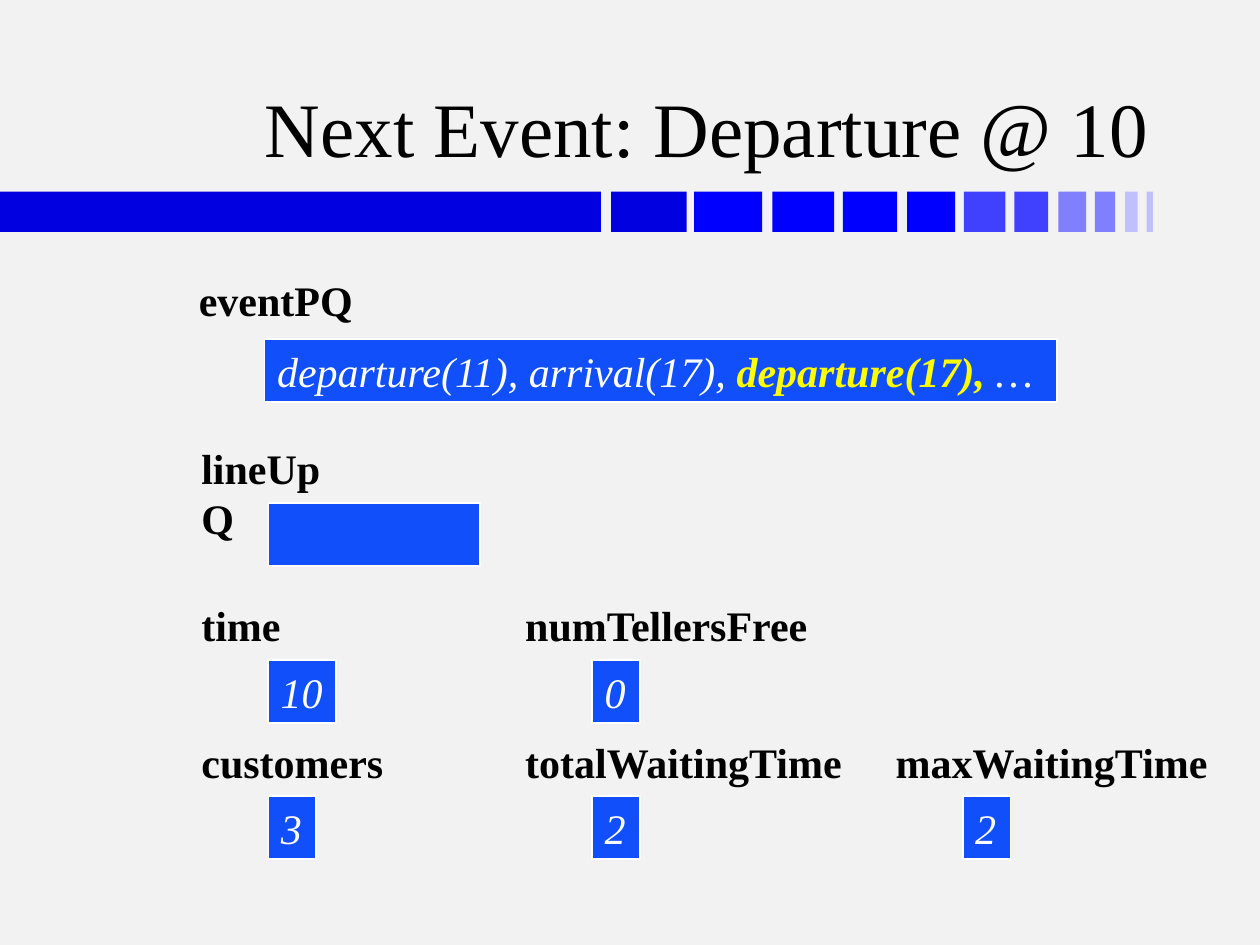
"""Build the bank simulation slide for the departure event at time 10."""
import pptx
import pptx.dml.color
import pptx.enum.shapes
import pptx.enum.text
import pptx.util

RGBColor = pptx.dml.color.RGBColor
ALIGN = pptx.enum.text.PP_ALIGN
ANCHOR = pptx.enum.text.MSO_ANCHOR
AUTO_SIZE = pptx.enum.text.MSO_AUTO_SIZE
RECTANGLE = pptx.enum.shapes.MSO_SHAPE.RECTANGLE

PX = 9144
FONT = "Times New Roman"
PAPER = RGBColor(0xF2, 0xF2, 0xF2)
BLACK = RGBColor(0, 0, 0)
WHITE = RGBColor(0xFF, 0xFF, 0xFF)
YELLOW = RGBColor(0xFF, 0xFF, 0)
BOX_BLUE = RGBColor(0x11, 0x4F, 0xFB)
NAVY = RGBColor(0, 0, 0xE0)
BLUE = RGBColor(0, 0, 0xFF)
MEDIUM_BLUE = RGBColor(0x40, 0x40, 0xFF)
LIGHT_BLUE = RGBColor(0x80, 0x80, 0xFF)
PALE_BLUE = RGBColor(0xC0, 0xC0, 0xFF)

BAR_SEGMENTS = [
    (0, 477, NAVY), (485, 60, NAVY),
    (551, 54, BLUE), (613, 49, BLUE), (669, 43, BLUE), (720, 38, BLUE),
    (765, 33, MEDIUM_BLUE), (805, 27, MEDIUM_BLUE),
    (840, 22, LIGHT_BLUE), (869, 16, LIGHT_BLUE),
    (893, 10, PALE_BLUE), (910, 5, PALE_BLUE),
]
LABELS = [
    ("eventPQ", 148, 213, 142), ("lineUpQ", 150, 346, 140),
    ("time", 150, 471, 83), ("numTellersFree", 407, 471, 248),
    ("customers", 150, 580, 165), ("totalWaitingTime", 407, 580, 274),
    ("maxWaitingTime", 701, 580, 270),
]
VALUES = [
    ("10", 213, 524, 54), ("0", 470, 524, 38),
    ("3", 213, 632, 38), ("2", 470, 632, 38), ("2", 764, 632, 38),
]


def scaled(*lengths):
    """Turn px lengths into EMU."""
    return [pptx.util.Emu(length * PX) for length in lengths]


def style(font, size, color, bold=False, italic=False):
    """Set the face, size, colour and weight of a font."""
    font.name = FONT
    font.size = pptx.util.Pt(size)
    font.color.rgb = color
    font.bold = bold
    font.italic = italic


def add_title(page, text):
    """Place the right-aligned title."""
    title = page.shapes.title
    title.left, title.top, title.width, title.height = scaled(74, 19, 848, 123)
    title.text_frame.text = text
    title.text_frame.vertical_anchor = ANCHOR.BOTTOM
    para = title.text_frame.paragraphs[0]
    para.alignment = ALIGN.RIGHT
    style(para.font, 44, BLACK)


def add_rectangle(page, left, top, width, height, color):
    """Draw a flat rectangle without an outline."""
    box = page.shapes.add_shape(RECTANGLE, *scaled(left, top, width, height))
    box.shadow.inherit = False
    box.fill.solid()
    box.fill.fore_color.rgb = color
    box.line.fill.background()
    return box


def add_label(page, text, left, top, width):
    """Write a bold variable name."""
    box = page.shapes.add_textbox(*scaled(left, top, width, 50))
    box.text_frame.word_wrap = False
    box.text_frame.auto_size = AUTO_SIZE.SHAPE_TO_FIT_TEXT
    box.text_frame.text = text
    style(box.text_frame.paragraphs[0].font, 24, BLACK, bold=True)


def add_value(page, text, left, top, width, wrap=False):
    """Draw a white-edged box with an italic value and return its paragraph."""
    box = add_rectangle(page, left, top, width, 50, BOX_BLUE)
    box.line.color.rgb = WHITE
    box.line.width = pptx.util.Pt(1)
    para = box.text_frame.paragraphs[0]
    para.alignment = ALIGN.LEFT
    style(para.font, 24, WHITE, italic=True)
    if text:
        box.text_frame.word_wrap = wrap
        box.text_frame.auto_size = AUTO_SIZE.SHAPE_TO_FIT_TEXT
        box.text_frame.vertical_anchor = ANCHOR.MIDDLE
        para.add_run().text = text
    return para


def add_event_queue(page):
    """Draw the event queue with its newest event highlighted."""
    para = add_value(page, "departure(11), arrival(17), ", 210, 269, 629, wrap=True)
    span = para.add_run()
    span.text = "departure(17), "
    style(span.font, 24, YELLOW, bold=True, italic=True)
    para.add_run().text = "…"


def main():
    """Build and save the deck."""
    deck = pptx.Presentation()
    deck.slide_width, deck.slide_height = scaled(1000, 750)
    page = deck.slides.add_slide(deck.slide_layouts[5])
    page.background.fill.solid()
    page.background.fill.fore_color.rgb = PAPER

    for left, width, color in BAR_SEGMENTS:
        add_rectangle(page, left, 152, width, 32, color)
    add_title(page, "Next Event: Departure @ 10")
    for label in LABELS:
        add_label(page, *label)
    add_event_queue(page)
    add_value(page, "", 213, 399, 168)
    for value in VALUES:
        add_value(page, *value)
    deck.save("out.pptx")


if __name__ == "__main__":
    main()
